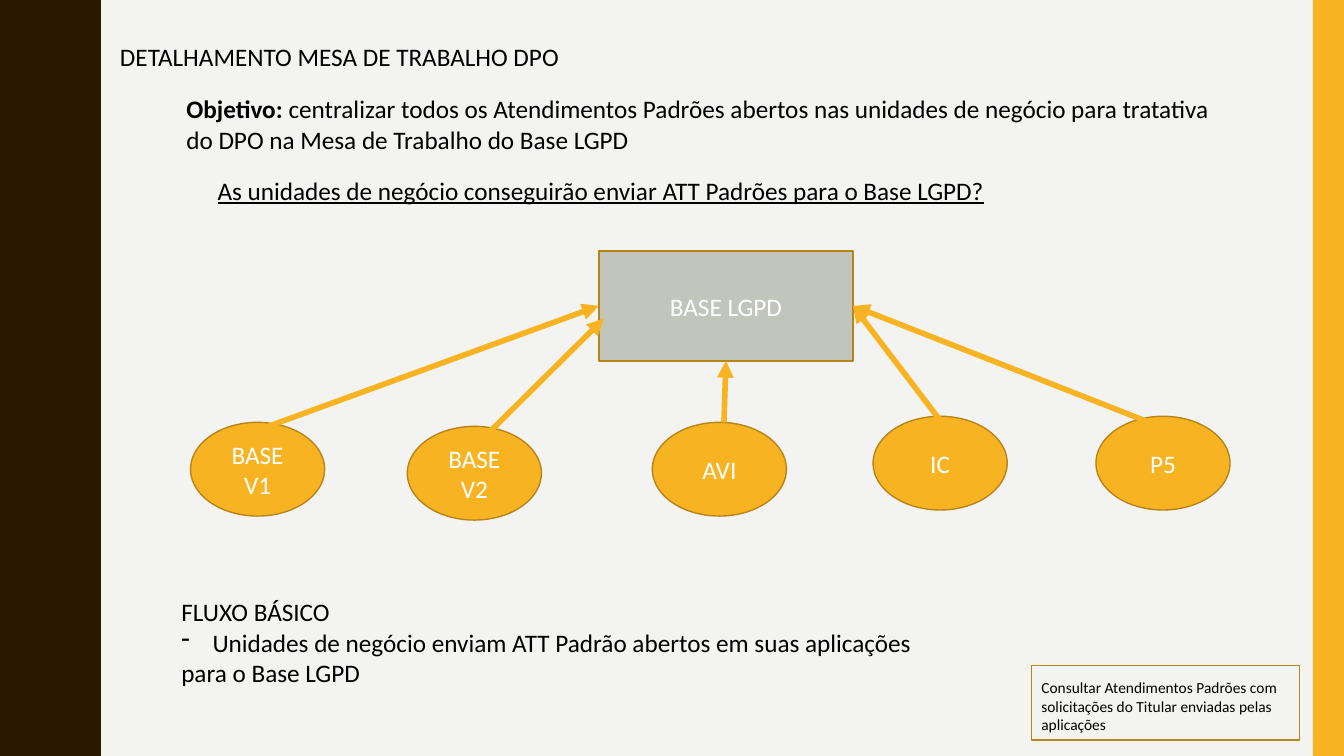
"""Build the slide on the data protection officer's workbench."""
from lxml import etree
from pptx import Presentation
from pptx.dml.color import RGBColor
from pptx.enum.shapes import MSO_CONNECTOR, MSO_SHAPE
from pptx.enum.text import MSO_ANCHOR, PP_ALIGN
from pptx.oxml.ns import qn
from pptx.util import Inches, Pt

RECTANGLE, ELLIPSE = MSO_SHAPE.RECTANGLE, MSO_SHAPE.OVAL
STRAIGHT = MSO_CONNECTOR.STRAIGHT
LEFT, CENTER = PP_ALIGN.LEFT, PP_ALIGN.CENTER
TOP, MIDDLE = MSO_ANCHOR.TOP, MSO_ANCHOR.MIDDLE
WIDTH, HEIGHT = 13.33, 7.5
FONT = "Calibri"
PAPER, BROWN, YELLOW, GRAY = "F3F3F2", "2A1A00", "F8B323", "C2C5BB"
OUTLINE, BLACK, WHITE = "B7841A", "000000", "FFFFFF"

TITLE = "DETALHAMENTO MESA DE TRABALHO DPO"
OBJECTIVE = [
    [("Objetivo: ", {"bold": True}),
     ("centralizar todos os Atendimentos Padrões abertos nas unidades de negócio para tratativa", {})],
    "do DPO na Mesa de Trabalho do Base LGPD",
]
QUESTION = [[("As unidades de negócio conseguirão enviar ATT Padrões para o Base LGPD?",
              {"underline": True})]]
FLOW = [
    "FLUXO BÁSICO",
    "Unidades de negócio enviam ATT Padrão abertos em suas aplicações",
    "para o Base LGPD",
]
NOTE = ["Consultar Atendimentos Padrões com solicitações do Titular enviadas pelas aplicações"]
HUB = "BASE LGPD"
HUB_AREA = (5.94, 2.49, 2.52, 1.09)
UNIT_SIZE = (1.33, 0.93)
# name, left, top, arrow start, arrow end, side of the hub
UNITS = [
    ("BASE V1", 1.89, 4.19, (2.66, 4.23), (5.99, 3.08), 1),
    ("BASE V2", 4.04, 4.23, (4.75, 4.39), (5.99, 3.16), None),
    ("AVI", 6.47, 4.19, (7.18, 4.19), (7.17, 3.59), 2),
    ("IC", 8.66, 4.13, (9.37, 4.23), (8.43, 3.05), 3),
    ("P5", 10.87, 4.13, (11.5, 4.23), (8.43, 3.05), 3),
]
WAVE_PERIOD = 1.5
HALF_WAVE = [
    (0.78, 0), (0.78, 0.07), (0.79, 0.14), (0.8, 0.2), (0.81, 0.25),
    (0.83, 0.29), (0.85, 0.33), (0.87, 0.38), (0.89, 0.42), (0.91, 0.46),
    (0.93, 0.5), (0.95, 0.55), (0.96, 0.61), (0.97, 0.68), (0.97, 0.75),
]


def color(value):
    return RGBColor.from_string(value)


def inches(values):
    return [Inches(value) for value in values]


def write(frame, lines, size=18, ink=BLACK, align=LEFT, anchor=TOP):
    frame.word_wrap = True
    frame.vertical_anchor = anchor
    for index, line in enumerate(lines):
        para = frame.paragraphs[0] if index == 0 else frame.add_paragraph()
        para.alignment = align
        for text, style in [(line, {})] if isinstance(line, str) else line:
            span = para.add_run()
            span.text = text
            span.font.name, span.font.size = FONT, Pt(size)
            span.font.color.rgb = color(ink)
            span.font.bold = style.get("bold", False)
            span.font.underline = style.get("underline", False)


def add_text(page, area, lines, **style):
    box = page.shapes.add_textbox(*inches(area))
    write(box.text_frame, lines, **style)
    return box


def paint(shape, fill=None, line=None):
    shape.shadow.inherit = False
    if fill:
        shape.fill.solid()
        shape.fill.fore_color.rgb = color(fill)
    else:
        shape.fill.background()
    if line:
        shape.line.color.rgb = color(line)
        shape.line.width = Pt(1)
    else:
        shape.line.fill.background()


def add_block(page, kind, area, fill=None, line=None, text=None):
    block = page.shapes.add_shape(kind, *inches(area))
    paint(block, fill, line)
    if text:
        write(block.text_frame, [text], ink=WHITE, align=CENTER, anchor=MIDDLE)
    return block


def add_wave(page):
    wave = HALF_WAVE + [(x, WAVE_PERIOD - y) for x, y in HALF_WAVE[-2:0:-1]]
    edge = [(x, y + turn * WAVE_PERIOD)
            for turn in range(round(HEIGHT / WAVE_PERIOD)) for x, y in wave]
    outline = edge + [(HALF_WAVE[0][0], HEIGHT), (0, HEIGHT)]
    builder = page.shapes.build_freeform(0, 0, scale=Inches(1))
    builder.add_line_segments(outline, close=True)
    paint(builder.convert_to_shape(), BROWN)


def add_arrow(page, start, end, hub, side):
    arrow = page.shapes.add_connector(STRAIGHT, *inches(start + end))
    if side is not None:
        arrow.end_connect(hub, side)
    arrow.line.color.rgb = color(YELLOW)
    arrow.line.width = Pt(4)
    etree.SubElement(arrow.line._get_or_add_ln(), qn("a:tailEnd"), type="triangle")
    etree.SubElement(arrow._element.spPr, qn("a:effectLst"))


def add_dash(para):
    properties = para._p.get_or_add_pPr()
    properties.set("marL", str(Inches(0.31)))
    properties.set("indent", str(-Inches(0.31)))
    etree.SubElement(properties, qn("a:buChar"), char="-")


def main():
    deck = Presentation()
    deck.slide_width, deck.slide_height = inches((WIDTH, HEIGHT))
    page = deck.slides.add_slide(deck.slide_layouts[5])
    page.background.fill.solid()
    page.background.fill.fore_color.rgb = color(PAPER)

    add_wave(page)
    add_block(page, RECTANGLE, (WIDTH - 0.31, 0, 0.31, HEIGHT), YELLOW)

    title = page.shapes.title
    title.left, title.top, title.width, title.height = inches((1.09, 0.36, 5.16, 0.4))
    write(title.text_frame, [TITLE])
    add_text(page, (1.75, 0.88, 10.56, 0.71), OBJECTIVE)
    add_text(page, (2.06, 1.69, 8.23, 0.4), QUESTION)
    flow = add_text(page, (1.7, 5.87, 7.53, 1.01), FLOW)
    add_dash(flow.text_frame.paragraphs[1])

    hub = add_block(page, RECTANGLE, HUB_AREA, GRAY, OUTLINE, HUB)
    for name, left, top, *_ in UNITS:
        add_block(page, ELLIPSE, (left, top, *UNIT_SIZE), YELLOW, OUTLINE, name)
    for *_, start, end, side in UNITS:
        add_arrow(page, start, end, hub, side)

    add_text(page, (10.23, 6.68, 3.04, 0.66), NOTE, size=11)
    add_block(page, RECTANGLE, (10.23, 6.6, 2.66, 0.74), line=OUTLINE)
    deck.save("out.pptx")


if __name__ == "__main__":
    main()
